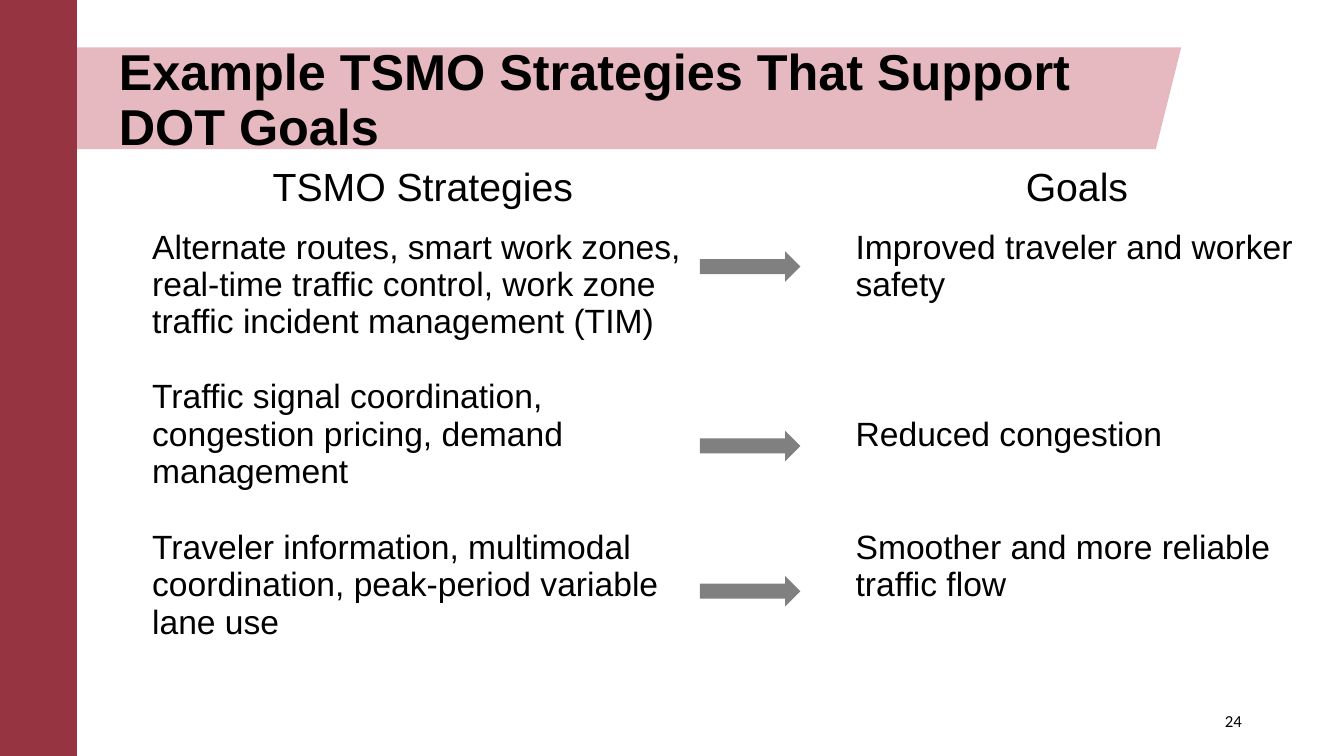
from lxml.etree import SubElement
from pptx import Presentation
from pptx.dml.color import RGBColor
from pptx.enum.shapes import MSO_SHAPE
from pptx.enum.text import MSO_ANCHOR, PP_ALIGN
from pptx.oxml.ns import qn
from pptx.util import Pt

TITLE = "Example TSMO Strategies That Support DOT Goals"
HEADINGS = ("TSMO Strategies", "Goals")
ROWS = [
    (
        [
            "Alternate routes, smart work zones, real-time traffic control, "
            "work zone traffic incident management (TIM)",
            "Traffic signal coordination, congestion pricing, demand management",
        ],
        ["Improved traveler and worker safety", "Reduced congestion"],
    ),
    (
        ["Traveler information, multimodal coordination, peak-period variable lane use"],
        ["Smoother and more reliable traffic flow"],
    ),
]
PAGE_NUMBER = "24"

COLUMN_WIDTHS = (401, 101.5, 330.5)
ROW_HEIGHTS = (51, 214.4, 115, 50)
TEXT_COLUMNS = (0, 2)
LINE = 26.8
PARAGRAPH_GAPS = (LINE, 3 * LINE)
ARROW_TOPS = (180.7, 308.9, 412.6)


def color(value):
    return RGBColor.from_string(value)


def add_block(page, kind, left, top, width, height, fill, outlined=False):
    block = page.shapes.add_shape(kind, Pt(left), Pt(top), Pt(width), Pt(height))
    block.shadow.inherit = False
    block.fill.solid()
    block.fill.fore_color.rgb = color(fill)
    if outlined:
        block.line.color.rgb = color(fill)
        block.line.width = Pt(1)
        outline = block.element.spPr.find(qn("a:ln"))
        SubElement(outline, qn("a:miter"), lim="800000")
    else:
        block.line.fill.background()
    return block


def add_text(para, text, size, font="Arial", bold=False, align=PP_ALIGN.LEFT):
    para.alignment = align
    span = para.add_run()
    span.text = text
    span.font.name = font
    span.font.size = Pt(size)
    span.font.bold = bold
    span.font.color.rgb = color("000000")


def add_box(page, left, top, width, height, anchor):
    box = page.shapes.add_textbox(Pt(left), Pt(top), Pt(width), Pt(height))
    box.text_frame.word_wrap = True
    box.text_frame.vertical_anchor = anchor
    return box.text_frame.paragraphs[0]


def add_goal_table(page):
    table = page.shapes.add_table(
        len(ROW_HEIGHTS), len(COLUMN_WIDTHS), Pt(101.5), Pt(108.7),
        Pt(sum(COLUMN_WIDTHS)), Pt(sum(ROW_HEIGHTS)),
    ).table
    table.first_row = False
    table.horz_banding = False
    for column, width in zip(table.columns, COLUMN_WIDTHS):
        column.width = Pt(width)
    for row, height in zip(table.rows, ROW_HEIGHTS):
        row.height = Pt(height)
    for cell in table.iter_cells():
        cell.fill.background()
    for column, heading in zip(TEXT_COLUMNS, HEADINGS):
        cell = table.cell(0, column)
        cell.vertical_anchor = MSO_ANCHOR.MIDDLE
        add_text(cell.text_frame.paragraphs[0], heading, 28, align=PP_ALIGN.CENTER)
    for row, entries in enumerate(ROWS, 1):
        for column, texts, gap in zip(TEXT_COLUMNS, entries, PARAGRAPH_GAPS):
            frame = table.cell(row, column).text_frame
            for index, text in enumerate(texts):
                para = frame.add_paragraph() if index else frame.paragraphs[0]
                if index:
                    para.space_before = Pt(gap)
                add_text(para, text, 24)


def main():
    deck = Presentation()
    deck.slide_width, deck.slide_height = Pt(960), Pt(540)
    page = deck.slides.add_slide(deck.slide_layouts[6])

    band = add_block(page, MSO_SHAPE.PARALLELOGRAM, 17.3, 33.8, 826.5, 72.7, "E6B8BF")
    band.adjustments[0] = 0.25
    add_block(page, MSO_SHAPE.RECTANGLE, 0, 0, 55, 540, "963442")

    title = add_box(page, 77.8, 30.2, 770.4, 74.2, MSO_ANCHOR.TOP)
    title.line_spacing = 0.9
    add_text(title, TITLE, 36, bold=True)

    add_goal_table(page)

    number = add_box(page, 678.2, 500.4, 216, 28.8, MSO_ANCHOR.MIDDLE)
    add_text(number, PAGE_NUMBER, 12, "Calibri", align=PP_ALIGN.RIGHT)

    for top in ARROW_TOPS:
        add_block(page, MSO_SHAPE.RIGHT_ARROW, 500.4, top, 70.6, 19.4, "808080", True)

    deck.save("out.pptx")


if __name__ == "__main__":
    main()
